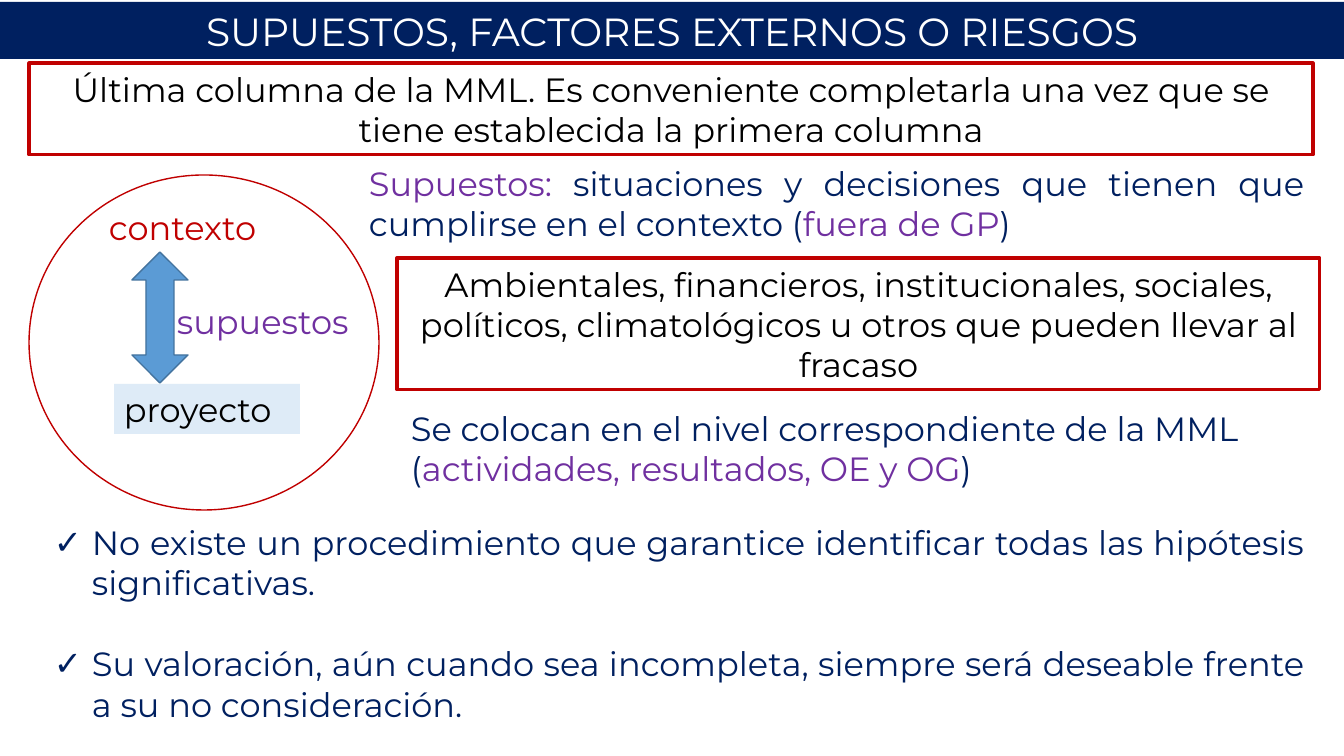
from dataclasses import dataclass
from lxml.etree import SubElement as Sub
from pptx import Presentation
from pptx.dml.color import RGBColor as Color
from pptx.enum.shapes import MSO_SHAPE as Shape
from pptx.enum.text import MSO_ANCHOR as Anchor, MSO_AUTO_SIZE as Fit, PP_ALIGN as Align
from pptx.oxml.ns import qn
from pptx.util import Emu, Pt


@dataclass(frozen=True)
class Theme:
    font: str = "Montserrat"
    head: int = 28
    body: int = 24
    gap: int = 29
    navy: str = "002060"
    red: str = "C00000"
    plum: str = "7030A0"
    black: str = "000000"
    white: str = "FFFFFF"
    pale: str = "DEEBF7"
    blue: str = "5B9BD5"
    edge: str = "43739E"


LOOK = Theme()


def px(num):
    return Emu(round(num * 914400 / 100.8))


def place(item, area):
    item.left, item.top, item.width, item.height = map(px, area)


def paint(item, fill=None, line=None, width=1):
    if fill:
        item.fill.solid()
        item.fill.fore_color.rgb = Color.from_string(fill)
    else:
        item.fill.background()
    if line:
        item.line.color.rgb = Color.from_string(line)
        item.line.width = Pt(width)
    else:
        item.line.fill.background()


def mark(para, sign, indent):
    props = para._p.get_or_add_pPr()
    props.set("marL", str(px(indent)))
    props.set("indent", str(-px(indent)))
    Sub(props, qn("a:buFont"), typeface=LOOK.font)
    Sub(props, qn("a:buChar"), char=sign)


def write(item, *paras, color=LOOK.black, size=LOOK.body, align=Align.LEFT,
          anchor=Anchor.TOP, bullet=None, gap=0):
    frame = item.text_frame
    frame.word_wrap = True
    frame.auto_size = Fit.NONE
    frame.vertical_anchor = anchor
    for pos, parts in enumerate(paras):
        para = frame.add_paragraph() if pos else frame.paragraphs[0]
        para.alignment = align
        if pos and gap:
            para.space_before = Pt(gap)
        if bullet:
            mark(para, bullet, 38)
        for part in [parts] if isinstance(parts, str) else parts:
            words, tint = (part, color) if isinstance(part, str) else part
            run = para.add_run()
            run.text = words
            run.font.name = LOOK.font
            run.font.size = Pt(size)
            run.font.color.rgb = Color.from_string(tint)


def form(shapes, kind, area, **style):
    item = shapes.add_shape(kind, *map(px, area))
    item.shadow.inherit = False
    paint(item, **style)
    return item


def label(shapes, area, *paras, **style):
    write(shapes.add_textbox(*map(px, area)), *paras, **style)


def frame(shapes, area, words):
    item = form(shapes, Shape.RECTANGLE, area, line=LOOK.red, width=2.25)
    write(item, words, align=Align.CENTER, anchor=Anchor.MIDDLE)


def banner(slide, words):
    title = slide.shapes.title
    place(title, (0, 2, 1344, 57))
    paint(title, fill=LOOK.navy)
    write(title, words, color=LOOK.white, size=LOOK.head,
          align=Align.CENTER, anchor=Anchor.MIDDLE)


def diagram(slide):
    shapes = slide.shapes.add_group_shape().shapes
    project = form(shapes, Shape.RECTANGLE, (114, 384, 186, 50), fill=LOOK.pale)
    write(project, "proyecto")
    form(shapes, Shape.OVAL, (29, 175, 350, 335), line=LOOK.red)
    label(shapes, (99, 202, 223, 50), "contexto", color=LOOK.red)
    form(shapes, Shape.UP_DOWN_ARROW, (132, 252, 56, 131),
         fill=LOOK.blue, line=LOOK.edge)
    label(shapes, (167, 296, 212, 50), "supuestos", color=LOOK.plum)


def main():
    deck = Presentation()
    deck.slide_width, deck.slide_height = px(1344), px(756)
    slide = deck.slides.add_slide(deck.slide_layouts[5])
    shapes = slide.shapes

    banner(slide, "SUPUESTOS, FACTORES EXTERNOS O RIESGOS")
    frame(shapes, (29, 63, 1284, 92),
          "Última columna de la MML. Es conveniente completarla una vez que se "
          "tiene establecida la primera columna")
    diagram(slide)
    label(shapes, (359, 158, 955, 92),
          [("Supuestos: ", LOOK.plum),
           "situaciones y decisiones que tienen que cumplirse en el contexto (",
           ("fuera de GP", LOOK.plum), ")"],
          color=LOOK.navy, align=Align.JUSTIFY)
    label(shapes, (401, 403, 923, 92),
          ["Se colocan en el nivel correspondiente de la MML (",
           ("actividades, resultados, OE y OG", LOOK.plum), ")"],
          color=LOOK.navy)
    label(shapes, (44, 517, 1270, 214),
          "No existe un procedimiento que garantice identificar todas las "
          "hipótesis significativas.",
          "Su valoración, aún cuando sea incompleta, siempre será deseable "
          "frente a su no consideración.",
          color=LOOK.navy, align=Align.JUSTIFY, bullet="✓", gap=LOOK.gap)
    frame(shapes, (397, 258, 923, 132),
          "Ambientales, financieros, institucionales, sociales, políticos, "
          "climatológicos u otros que pueden llevar al fracaso")
    deck.save("out.pptx")


if __name__ == "__main__":
    main()
